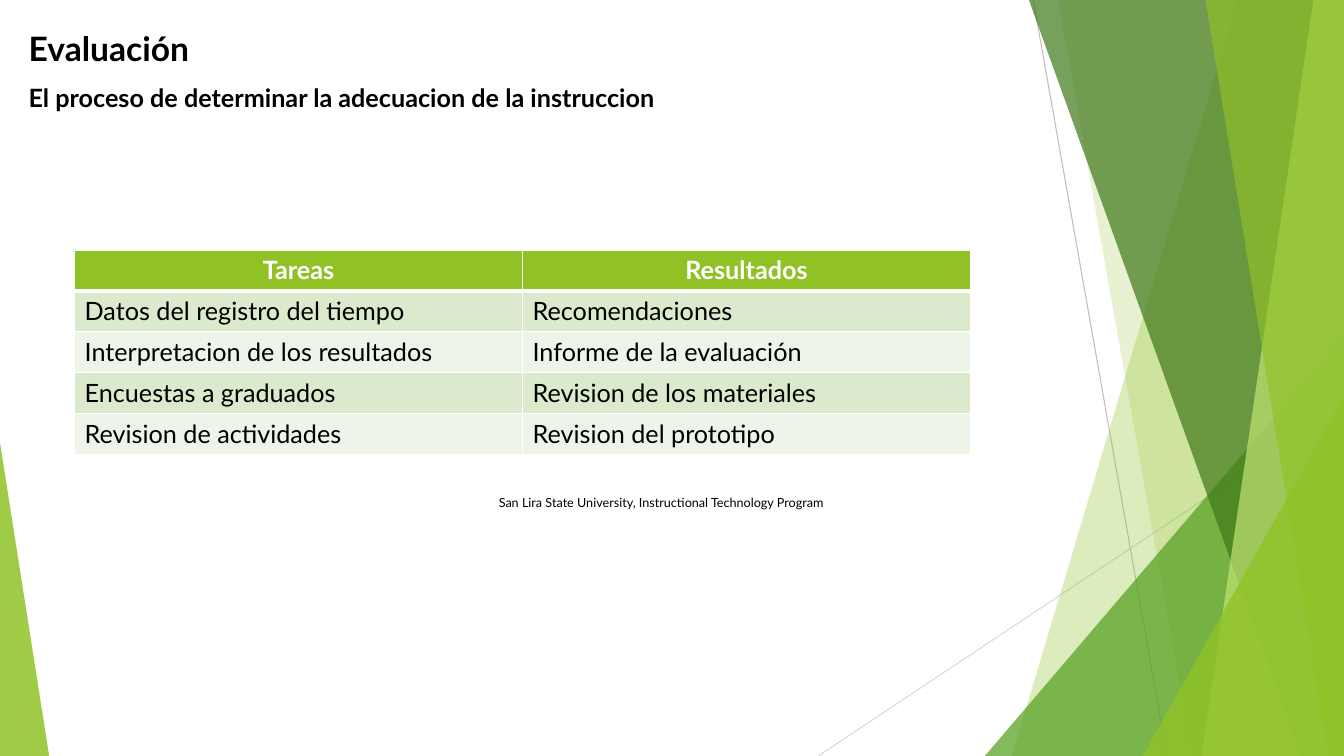
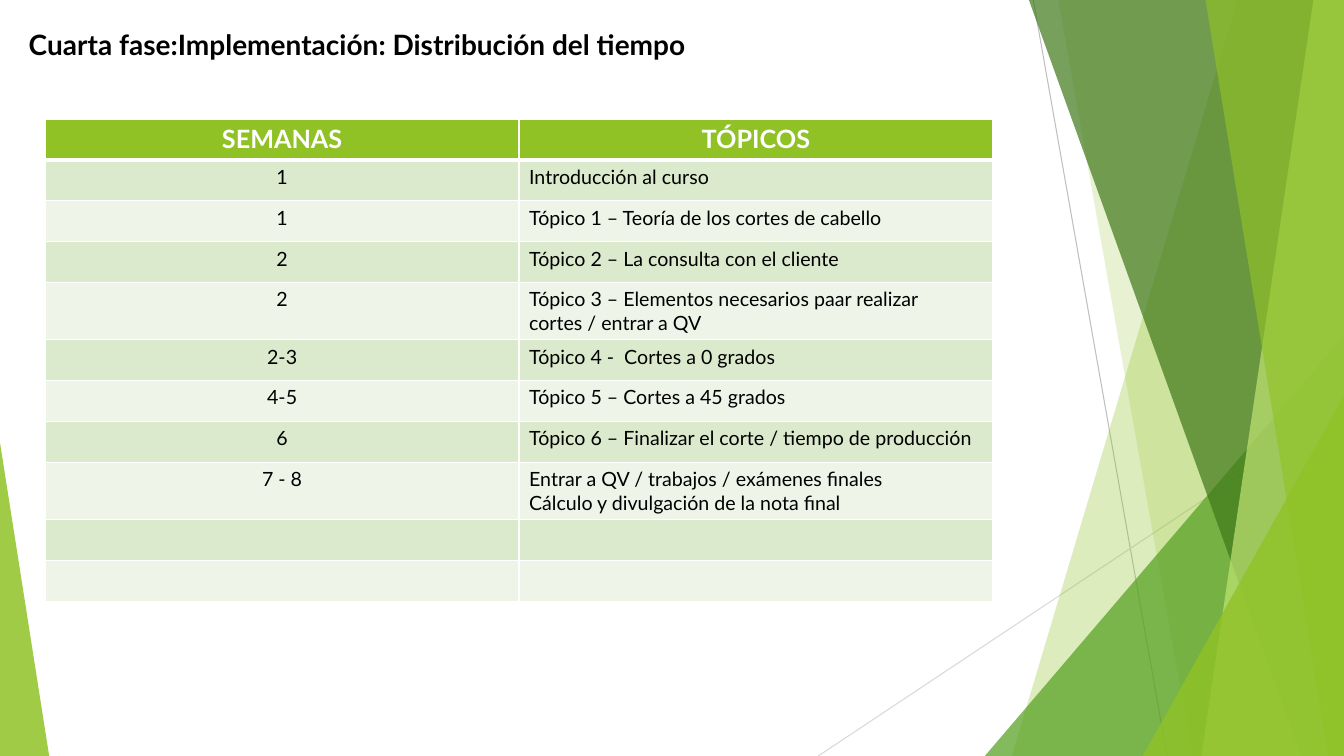
from lxml import etree
from pptx import Presentation
from pptx.dml.color import RGBColor
from pptx.enum.shapes import MSO_CONNECTOR, MSO_SHAPE
from pptx.enum.text import MSO_ANCHOR, MSO_AUTO_SIZE, PP_ALIGN
from pptx.oxml import parse_xml
from pptx.oxml.ns import nsdecls, qn
from pptx.util import Cm, Pt

TRIANGLE = MSO_SHAPE.ISOSCELES_TRIANGLE
STRAIGHT = MSO_CONNECTOR.STRAIGHT
TOP = MSO_ANCHOR.TOP
NO_AUTOFIT = MSO_AUTO_SIZE.NONE
LEFT = PP_ALIGN.LEFT
CENTER = PP_ALIGN.CENTER

SLIDE_WIDTH = 33.87
SLIDE_HEIGHT = 19.05
ROW_HEIGHT = 1.03
FONT = "Lato"
BLACK = "000000"
WHITE = "FFFFFF"
LIME = "90C226"
PALE_LIME = "C0E474"
GREEN = "54A021"
DARK_GREEN = "3F7819"
BAND_COLORS = ("DBE9CD", "EEF4E8")


def color(value):
    return RGBColor.from_string(value)


class Deck:
    def __init__(self):
        self.presentation = Presentation()
        self.presentation.slide_width = Cm(SLIDE_WIDTH)
        self.presentation.slide_height = Cm(SLIDE_HEIGHT)
        self.layout = self.presentation.slide_layouts[5]
        self.slide = None

    def add_slide(self, title, size):
        self.slide = self.presentation.slides.add_slide(self.layout)
        shape = self.slide.shapes.title
        shape.left, shape.top = Cm(0.47), Cm(0.57)
        shape.width, shape.height = Cm(23.8), Cm(1.36)
        self.fill_text(shape.text_frame, title, size, bold=True)

    def format_paragraph(self, paragraph, size, font_color=BLACK, bold=False, align=LEFT):
        paragraph.alignment = align
        font = paragraph.font
        font.name, font.size, font.bold = FONT, Pt(size), bold
        font.color.rgb = color(font_color)

    def fill_text(self, frame, text, size, bold=False):
        frame.text = text
        frame.word_wrap = True
        frame.auto_size = NO_AUTOFIT
        frame.vertical_anchor = TOP
        self.format_paragraph(frame.paragraphs[0], size, bold=bold)

    def text(self, text, left, top, width, height, size, bold=False):
        box = self.slide.shapes.add_textbox(Cm(left), Cm(top), Cm(width), Cm(height))
        self.fill_text(box.text_frame, text, size, bold)

    def paint(self, shape, fill_color, opacity):
        shape.shadow.inherit = False
        shape.fill.solid()
        shape.fill.fore_color.rgb = color(fill_color)
        shape.line.fill.background()
        fill = shape.element.xpath(".//a:srgbClr")[0]
        etree.SubElement(fill, qn("a:alpha")).set("val", str(opacity * 1000))

    def line(self, shapes, start, end, line_color):
        points = [Cm(value) for value in (*start, *end)]
        connector = shapes.add_connector(STRAIGHT, *points)
        connector.line.color.rgb = color(line_color)
        connector.line.width = Pt(0.75)
        etree.SubElement(connector.element.spPr, qn("a:effectLst"))

    def slab(self, shapes, top_x, bottom_x, fill_color, opacity):
        builder = shapes.build_freeform(Cm(top_x), 0)
        corners = ((SLIDE_WIDTH, 0), (SLIDE_WIDTH, SLIDE_HEIGHT), (bottom_x, SLIDE_HEIGHT))
        builder.add_line_segments([(Cm(x), Cm(y)) for x, y in corners], close=True)
        self.paint(builder.convert_to_shape(), fill_color, opacity)

    def triangle(self, shapes, left, top, right, apex, fill_color, opacity):
        shape = shapes.add_shape(
            TRIANGLE, Cm(left), Cm(top), Cm(right - left), Cm(SLIDE_HEIGHT - top)
        )
        shape.adjustments[0] = apex
        self.paint(shape, fill_color, opacity)

    def decorate_layout(self):
        group = self.slide.shapes.add_group_shape()
        shapes = group.shapes
        self.line(shapes, (26.04, 0), (29.41, SLIDE_HEIGHT), "BFBFBF")
        self.line(shapes, (SLIDE_WIDTH, 10.24), (20.62, SLIDE_HEIGHT), "D9D9D9")
        self.slab(shapes, 31.19, 25.5, LIME, 30)
        self.slab(shapes, 26.67, 30.05, LIME, 20)
        self.triangle(shapes, 24.82, 8.46, SLIDE_WIDTH, 1, GREEN, 72)
        self.slab(shapes, 25.93, 32.79, DARK_GREEN, 70)
        self.slab(shapes, 33.1, 30.28, PALE_LIME, 70)
        self.slab(shapes, 30.38, 33.48, LIME, 65)
        self.triangle(shapes, 28.8, 9.98, SLIDE_WIDTH, 1, LIME, 80)
        self.triangle(shapes, 0, 11.15, 1.24, 0, LIME, 85)
        for number, properties in enumerate(group.element.xpath(".//p:cNvPr"), 20):
            properties.set("id", str(number))
        self.layout.shapes.element.append(group.element)

    def format_cell(self, cell, row_index, size, align):
        header = row_index == 0
        properties = cell._tc.get_or_add_tcPr()
        widths = {"L": 1, "R": 1, "T": 3 if row_index == 1 else 1, "B": 3 if header else 1}
        for side, width in widths.items():
            properties.append(parse_xml(
                f'<a:ln{side} {nsdecls("a")} w="{Pt(width)}"><a:solidFill>'
                f'<a:srgbClr val="{WHITE}"/></a:solidFill></a:ln{side}>'
            ))
        cell.fill.solid()
        cell.fill.fore_color.rgb = color(LIME if header else BAND_COLORS[(row_index - 1) % 2])
        for paragraph in cell.text_frame.paragraphs:
            if header:
                self.format_paragraph(paragraph, 18, WHITE, True, CENTER)
            else:
                self.format_paragraph(paragraph, size, align=align)

    def table(self, rows, left, top, width, size, alignments):
        frame = self.slide.shapes.add_table(
            len(rows), len(rows[0]), Cm(left), Cm(top), Cm(width), Cm(ROW_HEIGHT * len(rows))
        )
        for row_index, values in enumerate(rows):
            for column_index, value in enumerate(values):
                cell = frame.table.cell(row_index, column_index)
                cell.text = value
                self.format_cell(cell, row_index, size, alignments[column_index])


def main():
    deck = Deck()

    deck.add_slide("Evaluación", 24)
    deck.decorate_layout()
    deck.text(
        "El proceso de determinar la adecuacion de la instruccion",
        0.47, 1.94, 23.8, 1.02, 18, bold=True,
    )
    evaluation_rows = [
        ("Tareas", "Resultados"),
        ("Datos del registro del tiempo", "Recomendaciones"),
        ("Interpretacion de los resultados", "Informe de la evaluación"),
        ("Encuestas a graduados", "Revision de los materiales"),
        ("Revision de actividades", "Revision del prototipo"),
    ]
    deck.table(evaluation_rows, 1.88, 6.3, 22.58, 18, (LEFT, LEFT))
    deck.text(
        "San Lira State University, Instructional Technology Program",
        12.32, 12.34, 16.94, 0.64, 9,
    )

    deck.add_slide("Cuarta fase:Implementación: Distribución del tiempo", 20)
    schedule_rows = [
        ("SEMANAS", "TÓPICOS"),
        ("1", "Introducción al curso"),
        ("1", "Tópico 1 – Teoría de los cortes de cabello"),
        ("2", "Tópico 2 – La consulta con el cliente"),
        ("2", "Tópico 3 – Elementos necesarios paar realizar cortes / entrar a QV"),
        ("2-3", "Tópico 4 -  Cortes a 0 grados"),
        ("4-5", "Tópico 5 – Cortes a 45 grados"),
        ("6", "Tópico 6 – Finalizar el corte / tiempo de producción"),
        (
            "7 - 8",
            "Entrar a QV / trabajos / exámenes finales\nCálculo y divulgación de la nota final",
        ),
        ("", ""),
        ("", ""),
    ]
    deck.table(schedule_rows, 1.14, 3, 23.88, 14, (CENTER, LEFT))

    deck.presentation.save("out.pptx")


if __name__ == "__main__":
    main()
